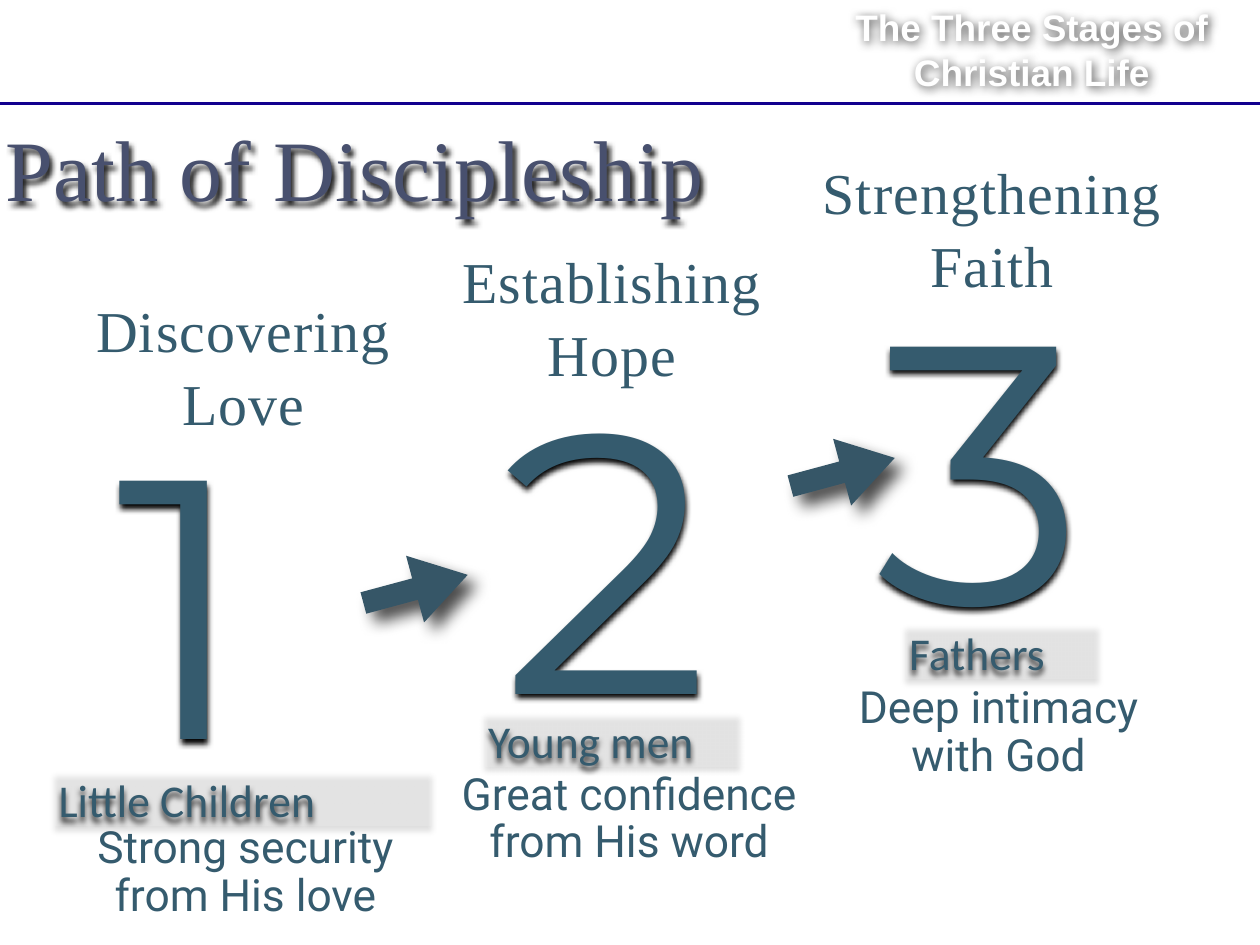
"""Build the Path of Discipleship slide with its three rising stages."""
from lxml.etree import SubElement
from pptx import Presentation
from pptx.dml.color import RGBColor
from pptx.enum.shapes import MSO_CONNECTOR, MSO_SHAPE
from pptx.enum.text import MSO_ANCHOR, PP_ALIGN
from pptx.oxml.ns import qn
from pptx.util import Inches, Pt

WHITE = RGBColor(0xFF, 0xFF, 0xFF)
NAVY = RGBColor(0x11, 0x00, 0x8E)
INDIGO = RGBColor(0x48, 0x50, 0x6E)
TEAL = RGBColor(0x35, 0x5B, 0x6E)
SLATE = RGBColor(0x36, 0x56, 0x67)
BLACK = RGBColor(0x00, 0x00, 0x00)
NEAR_BLACK = RGBColor(0x06, 0x06, 0x06)


def add_shadow(shape, color, opacity, blur, distance, angle):
    shape.shadow.inherit = False
    effects = shape._element.spPr.find(qn("a:effectLst"))
    outer = SubElement(effects, qn("a:outerShdw"), blurRad=str(Pt(blur)),
                       dist=str(Pt(distance)), dir=str(angle * 60000),
                       algn="ctr", rotWithShape="0")
    tint = SubElement(outer, qn("a:srgbClr"), val=str(color))
    SubElement(tint, qn("a:alpha"), val=str(opacity * 1000))


def write(shape, text, font, size, color, align=PP_ALIGN.CENTER, inset=0.06,
          anchor=MSO_ANCHOR.MIDDLE, bold=False, tracking=0, leading=1.0):
    frame = shape.text_frame
    frame.word_wrap = True
    frame.vertical_anchor = anchor
    frame.margin_left = frame.margin_right = Inches(inset)
    frame.margin_top = frame.margin_bottom = Inches(inset)
    line = frame.paragraphs[0]
    line.text = text
    line.alignment = align
    line.line_spacing = leading
    line.font.name = font
    line.font.size = Pt(size)
    line.font.bold = bold
    line.font.color.rgb = color
    if tracking:
        line._p.pPr.find(qn("a:defRPr")).set("spc", str(int(tracking * 100)))


prs = Presentation()
prs.slide_width, prs.slide_height = Inches(14.22), Inches(10.67)
slide = prs.slides.add_slide(prs.slide_layouts[6])
shapes = slide.shapes

rule = shapes.add_connector(MSO_CONNECTOR.STRAIGHT, Inches(-0.25), Inches(1.17),
                            Inches(15.08), Inches(1.17))
rule.line.color.rgb = NAVY
rule.line.width = Pt(3)
SubElement(rule._element.spPr, qn("a:effectLst"))

header = shapes.add_textbox(Inches(9.04), Inches(0), Inches(5.21), Inches(1.11))
write(header, "The Three Stages of Christian Life", "Arial", 30, WHITE, bold=True)
add_shadow(header, BLACK, 70, 8, 2, 45)

title = shapes.add_textbox(Inches(0), Inches(1.24), Inches(13.03), Inches(1.31))
write(title, "Path of Discipleship", "Times New Roman", 70, INDIGO,
      align=PP_ALIGN.LEFT, anchor=MSO_ANCHOR.TOP)
add_shadow(title, BLACK, 90, 4, 4, 60)

stages = [
    ("1", (1.26, 3.69), "Discovering Love", (0.64, 3.31),
     "Little Children", (0.62, 8.73, 4.25),
     "Strong security from His love", (0.89, 9.23, 3.76)),
    ("2", (5.6, 3.18), "Establishing\nHope", (4.8, 2.75),
     "Young men", (5.47, 8.06, 2.88),
     "Great confidence from His word", (4.99, 8.63, 4.22)),
    ("3", (9.83, 2.17), "Strengthening\nFaith", (9.09, 1.75),
     "Fathers", (10.22, 7.07, 2.18),
     "Deep intimacy with God", (9.16, 7.65, 4.22)),
]
for number, number_at, goal, goal_at, group, group_at, fruit, fruit_at in stages:
    goal_box = shapes.add_textbox(*map(Inches, (*goal_at, 4.22, 1.61)))
    write(goal_box, goal, "Times New Roman", 47, TEAL, tracking=0.9, leading=1.05)

    numeral = shapes.add_textbox(*map(Inches, (*number_at, 2.99, 5.99)))
    write(numeral, number, "Montserrat", 300, TEAL, align=PP_ALIGN.LEFT, tracking=6)
    add_shadow(numeral, NEAR_BLACK, 100, 5, 3, 90)

    fruit_box = shapes.add_textbox(*map(Inches, (*fruit_at, 1.25)))
    write(fruit_box, fruit, "Roboto", 36, TEAL, leading=0.9)

    group_label = shapes.add_shape(MSO_SHAPE.RECTANGLE, *map(Inches, (*group_at, 0.6)))
    group_label.fill.solid()
    group_label.fill.fore_color.rgb = WHITE
    tint = group_label._element.spPr.find(qn("a:solidFill"))[0]
    SubElement(tint, qn("a:alpha"), val="13000")
    group_label.line.fill.background()
    write(group_label, group, "Calibri", 37, TEAL, align=PP_ALIGN.LEFT, inset=0.04)
    add_shadow(group_label, NEAR_BLACK, 100, 5, 3, 90)

for left, top in [(4.08, 6.26), (8.9, 4.94)]:
    arrow = shapes.add_shape(MSO_SHAPE.RIGHT_ARROW, Inches(left), Inches(top),
                             Inches(1.22), Inches(0.78))
    arrow.rotation = 344.9
    arrow.adjustments[0], arrow.adjustments[1] = 0.32, 0.79
    arrow.fill.solid()
    arrow.fill.fore_color.rgb = SLATE
    arrow.line.fill.background()
    add_shadow(arrow, BLACK, 70, 13, 11, 45)

prs.save("out.pptx")
